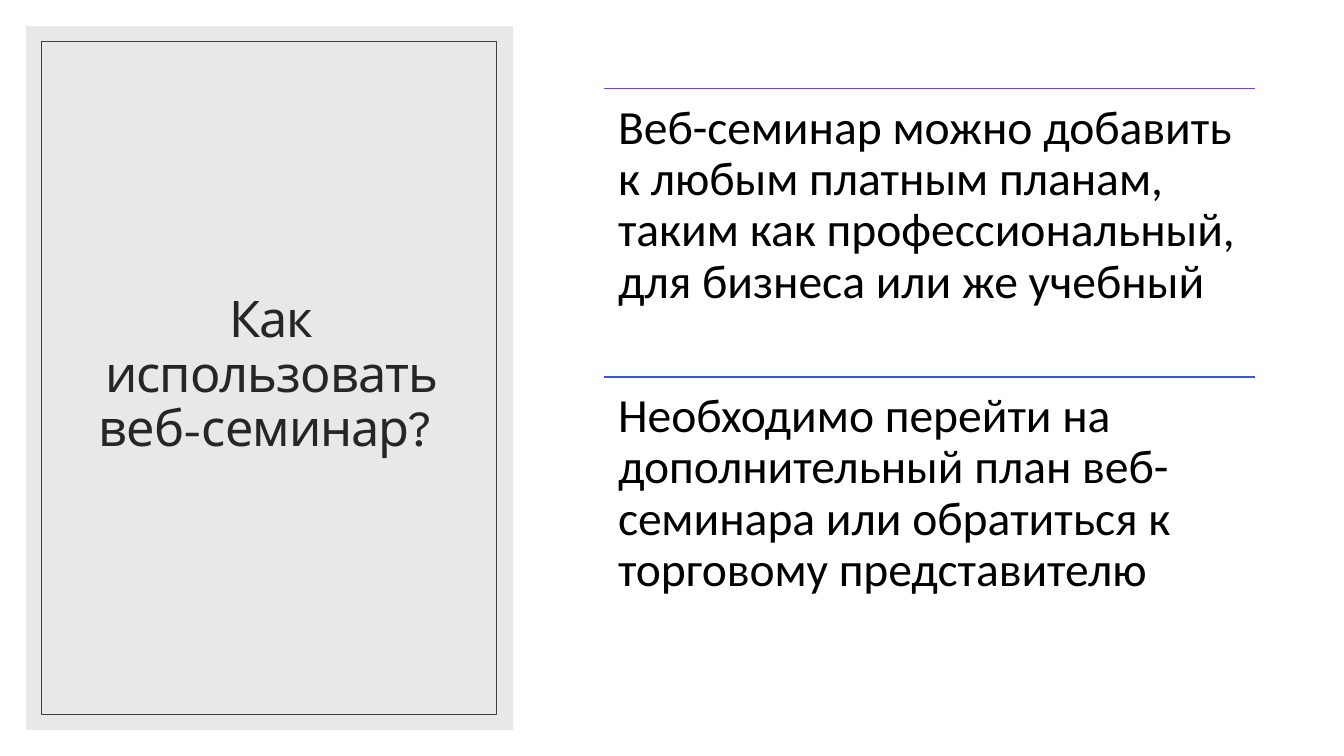
from dataclasses import dataclass

import pptx
import pptx.util
from lxml import etree
from pptx.dml.color import RGBColor
from pptx.enum.shapes import MSO_CONNECTOR, MSO_SHAPE
from pptx.enum.text import MSO_ANCHOR, PP_ALIGN
from pptx.oxml.ns import qn

Pt = pptx.util.Pt


@dataclass(frozen=True)
class Theme:
    panel: str = "D9D9D9"
    frame: str = "404040"
    title: str = "262626"
    body: str = "000000"
    rules: tuple = ("6C46DD", "3754E8")
    head_font: str = "League Spartan"
    body_font: str = "Calibri"
    head_size: int = 36
    body_size: int = 34


THEME = Theme()
TITLE = "Как использовать веб-семинар? "
POINTS = (
    "Веб-семинар можно добавить к любым платным планам, таким как "
    "профессиональный, для бизнеса или же учебный",
    "Необходимо перейти на дополнительный план веб-семинара "
    "или обратиться к торговому представителю",
)
LEFT, TOP, WIDTH, STEP = 431.3, 63.4, 465.1, 206


def color(code):
    return RGBColor.from_string(code)


def add_rect(slide, x, y, w, h):
    rect = slide.shapes.add_shape(
        MSO_SHAPE.RECTANGLE, Pt(x), Pt(y), Pt(w), Pt(h))
    rect.shadow.inherit = False
    return rect


def add_panel(slide):
    """Draw the pale side panel, 60% opaque."""
    panel = add_rect(slide, 18.7, 18.7, 347.8, 502.6)
    panel.fill.solid()
    panel.fill.fore_color.rgb = color(THEME.panel)
    panel.line.fill.background()
    tint = next(panel.fill._xPr.iter(qn("a:srgbClr")))
    etree.SubElement(tint, qn("a:alpha")).set("val", "60000")


def add_frame(slide):
    frame = add_rect(slide, 29.5, 29.5, 324.7, 481)
    frame.fill.background()
    frame.line.color.rgb = color(THEME.frame)
    frame.line.width = Pt(0.5)


def add_rule(slide, x, y, w, code):
    rule = slide.shapes.add_connector(
        MSO_CONNECTOR.STRAIGHT, Pt(x), Pt(y), Pt(x + w), Pt(y))
    rule.line.color.rgb = color(code)
    rule.line.width = Pt(1)
    etree.SubElement(rule._element.spPr, qn("a:effectLst"))


def add_text(slide, area, text, face, size, code):
    """Add a wrapped one-paragraph box; return its frame and paragraph."""
    box = slide.shapes.add_textbox(*(Pt(length) for length in area))
    frame = box.text_frame
    frame.word_wrap = True
    para = frame.paragraphs[0]
    para.text = text
    para.line_spacing = 0.9
    para.font.name = face
    para.font.size = Pt(size)
    para.font.color.rgb = color(code)
    return frame, para


def add_title(slide):
    frame, para = add_text(slide, (45.4, 43.9, 296.6, 449.3), TITLE,
                           THEME.head_font, THEME.head_size, THEME.title)
    frame.vertical_anchor = MSO_ANCHOR.MIDDLE
    para.alignment = PP_ALIGN.CENTER
    para.runs[0]._r.get_or_add_rPr().set("spc", "-70")


def add_point(slide, y, text, code):
    add_rule(slide, LEFT, y, WIDTH, code)
    frame, _ = add_text(slide, (LEFT, y, WIDTH, STEP), text,
                        THEME.body_font, THEME.body_size, THEME.body)
    frame.margin_left = frame.margin_right = Pt(10.2)
    frame.margin_top = frame.margin_bottom = Pt(10.2)


def main():
    deck = pptx.Presentation()
    deck.slide_width, deck.slide_height = Pt(960), Pt(540)
    slide = deck.slides.add_slide(deck.slide_layouts[6])
    add_panel(slide)
    add_title(slide)
    add_frame(slide)
    for row, (text, code) in enumerate(zip(POINTS, THEME.rules)):
        add_point(slide, TOP + row * STEP, text, code)
    deck.save("out.pptx")


if __name__ == "__main__":
    main()
